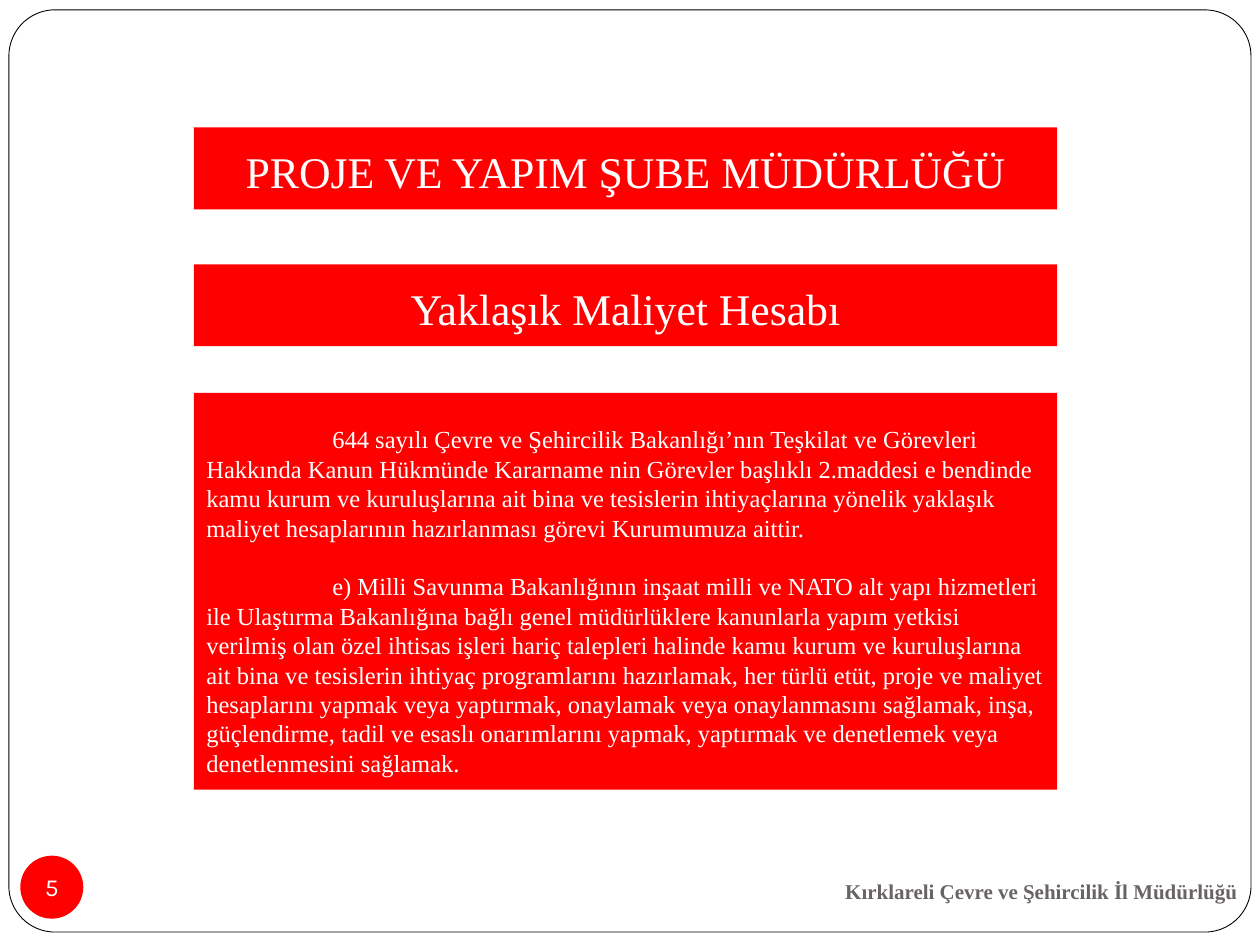
from dataclasses import dataclass

from pptx import Presentation
from pptx import util as u
from pptx.dml.color import RGBColor
from pptx.enum import shapes, text


@dataclass(frozen=True)
class Theme:
    red: str = "FF0000"
    white: str = "FFFFFF"
    black: str = "000000"
    grey: str = "696464"
    serif: str = "Times New Roman"
    sans: str = "Karla"
    heading: int = 25
    body: int = 14
    body_line: float = 16.8
    footer: int = 12


BANNER_LEFT, BANNER_WIDTH, BANNER_HEIGHT = 3.91, 17.4, 1.65

PARAGRAPHS = [
    "644 sayılı Çevre ve Şehircilik Bakanlığı’nın Teşkilat ve Görevleri Hakkında "
    "Kanun Hükmünde Kararname nin Görevler başlıklı 2.maddesi e bendinde kamu kurum "
    "ve kuruluşlarına ait bina ve tesislerin ihtiyaçlarına yönelik yaklaşık maliyet "
    "hesaplarının hazırlanması görevi Kurumumuza aittir.",
    "e) Milli Savunma Bakanlığının inşaat milli ve NATO alt yapı hizmetleri ile "
    "Ulaştırma Bakanlığına bağlı genel müdürlüklere kanunlarla yapım yetkisi verilmiş "
    "olan özel ihtisas işleri hariç talepleri halinde kamu kurum ve kuruluşlarına ait "
    "bina ve tesislerin ihtiyaç programlarını hazırlamak, her türlü etüt, proje ve "
    "maliyet hesaplarını yapmak veya yaptırmak, onaylamak veya onaylanmasını sağlamak, "
    "inşa, güçlendirme, tadil ve esaslı onarımlarını yapmak, yaptırmak ve denetlemek "
    "veya denetlenmesini sağlamak.",
]


class SlideBuilder:
    """Holds the theme and the slide being filled."""

    def __init__(self, slide, theme):
        self.slide = slide
        self.theme = theme

    def shape(self, kind, left, top, width, height, fill, line=None):
        item = self.slide.shapes.add_shape(
            kind, u.Cm(left), u.Cm(top), u.Cm(width), u.Cm(height))
        item.shadow.inherit = False
        item.fill.solid()
        item.fill.fore_color.rgb = RGBColor.from_string(fill)
        if line:
            item.line.color.rgb = RGBColor.from_string(line)
            item.line.width = u.Pt(0.5)
        else:
            item.line.fill.background()
        return item

    def add_span(self, para, words, size, color, font=None, bold=False,
                 align=text.PP_ALIGN.LEFT):
        para.alignment = align
        span = para.add_run()
        span.text = words
        span.font.name = font or self.theme.serif
        span.font.size = u.Pt(size)
        span.font.bold = bold
        span.font.color.rgb = RGBColor.from_string(color)

    def frame(self):
        panel = self.shape(shapes.MSO_SHAPE.ROUNDED_RECTANGLE, 0.18, 0.2, 25.04, 18.59,
                           self.theme.white, self.theme.black)
        panel.adjustments[0] = 0.05

    def footer(self, words):
        box = self.slide.shapes.add_textbox(
            u.Cm(16.79), u.Cm(17.32), u.Cm(8.61), u.Cm(1.27)).text_frame
        box.word_wrap = True
        box.vertical_anchor = text.MSO_ANCHOR.MIDDLE
        self.add_span(box.paragraphs[0], words, self.theme.footer, self.theme.grey,
                      bold=True)

    def page_number(self, number):
        box = self.shape(shapes.MSO_SHAPE.OVAL, 0.41, 17.25, 1.27, 1.27,
                         self.theme.red).text_frame
        box.margin_left = box.margin_right = box.margin_top = box.margin_bottom = 0
        box.word_wrap = False
        box.vertical_anchor = text.MSO_ANCHOR.MIDDLE
        self.add_span(box.paragraphs[0], str(number), self.theme.body, self.theme.white,
                      self.theme.sans, align=text.PP_ALIGN.CENTER)

    def prepare(self, box):
        """Give a red banner its margins and bottom anchor."""
        box.margin_left = box.margin_right = box.margin_bottom = u.Cm(0.25)
        box.margin_top = u.Cm(0.13)
        box.word_wrap = True
        box.auto_size = text.MSO_AUTO_SIZE.NONE
        box.vertical_anchor = text.MSO_ANCHOR.BOTTOM
        return box

    def heading(self, box, words):
        self.add_span(self.prepare(box).paragraphs[0], words, self.theme.heading,
                      self.theme.white, align=text.PP_ALIGN.CENTER)

    def title(self, words, top):
        title = self.slide.shapes.title
        title.left, title.top = u.Cm(BANNER_LEFT), u.Cm(top)
        title.width, title.height = u.Cm(BANNER_WIDTH), u.Cm(BANNER_HEIGHT)
        title.fill.solid()
        title.fill.fore_color.rgb = RGBColor.from_string(self.theme.red)
        self.heading(title.text_frame, words)
        # The placeholder starts at the back; bring it in front of the frame.
        self.slide.shapes._spTree.append(title._element)

    def banner(self, top, height=BANNER_HEIGHT):
        return self.shape(shapes.MSO_SHAPE.RECTANGLE, BANNER_LEFT, top, BANNER_WIDTH,
                          height, self.theme.red).text_frame

    def subtitle(self, words, top):
        self.heading(self.banner(top), words)

    def body(self, paragraphs, top, height):
        box = self.prepare(self.banner(top, height))
        for index, words in enumerate(paragraphs):
            para = box.add_paragraph() if index else box.paragraphs[0]
            para.line_spacing = u.Pt(self.theme.body_line)
            if index:
                para.space_before = u.Pt(self.theme.body_line)
            para._p.get_or_add_pPr().set("indent", str(u.Cm(2.54)))
            self.add_span(para, words, self.theme.body, self.theme.white)


def main():
    deck = Presentation()
    deck.slide_width, deck.slide_height = u.Cm(25.4), u.Cm(19.05)
    page = SlideBuilder(deck.slides.add_slide(deck.slide_layouts[5]), Theme())
    page.frame()
    page.footer("Kırklareli Çevre ve Şehircilik İl Müdürlüğü")
    page.page_number(5)
    page.title("PROJE VE YAPIM ŞUBE MÜDÜRLÜĞÜ", 2.57)
    page.subtitle("Yaklaşık Maliyet Hesabı", 5.33)
    page.body(PARAGRAPHS, 7.92, 8)
    deck.save("out.pptx")


if __name__ == "__main__":
    main()
